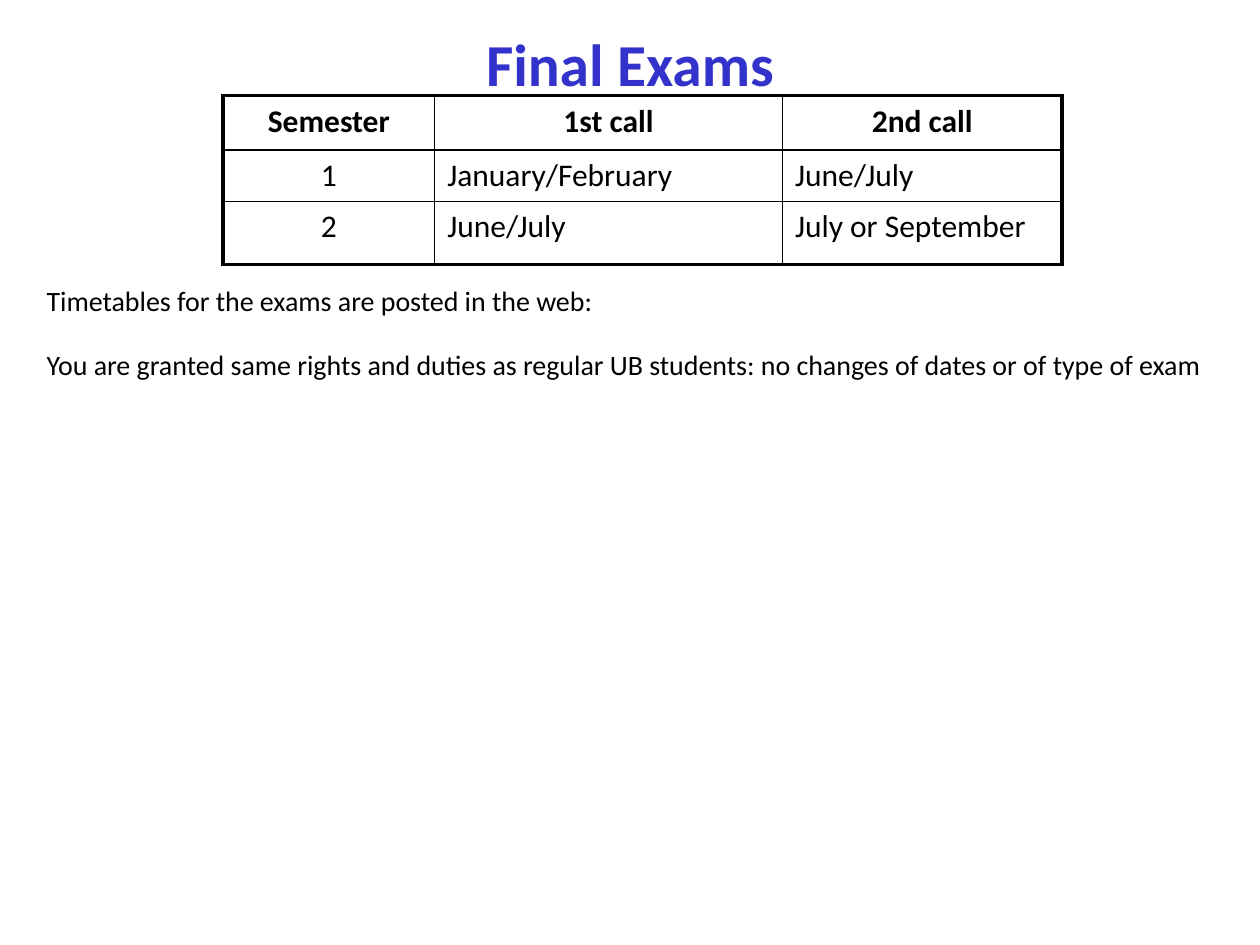
"""Build the Final Exams slide with its table of exam calls."""
from dataclasses import dataclass

from lxml.etree import SubElement
from pptx import Presentation
from pptx.dml.color import RGBColor
from pptx.enum.text import MSO_ANCHOR as Anchor, MSO_AUTO_SIZE as AutoSize, PP_ALIGN as Align
from pptx.oxml.ns import qn
from pptx.util import Inches, Pt

BLACK = RGBColor(0x00, 0x00, 0x00)
TITLE_BLUE = RGBColor(0x33, 0x33, 0xCC)
FONT = "Calibri"
OUTER_BORDER = Pt(2.25)
INNER_BORDER = Pt(1)
COLUMN_WIDTHS = (1.68, 2.76, 2.22)
ROW_HEIGHTS = (0.43, 0.41, 0.5)


@dataclass
class ExamRow:
    semester: str
    first_call: str
    second_call: str
    header: bool = False


EXAM_ROWS = (
    ExamRow("Semester", "1st call", "2nd call", header=True),
    ExamRow("1", "January/February", "June/July"),
    ExamRow("2", "June/July", "July or September"),
)
NOTES = (
    "Timetables for the exams are posted in the web:",
    "You are granted same rights and duties as regular UB students: "
    "no changes of dates or of type of exam",
)


def place(shape, left: float, top: float, width: float, height: float) -> None:
    shape.left, shape.top = Inches(left), Inches(top)
    shape.width, shape.height = Inches(width), Inches(height)


def format_runs(paragraph, size: float, color: RGBColor, bold: bool = False) -> None:
    for run in paragraph.runs:
        run.font.name = FONT
        run.font.size = Pt(size)
        run.font.bold = bold
        run.font.color.rgb = color


def add_border(cell, side: str, width: int) -> None:
    properties = cell._tc.get_or_add_tcPr()
    line = SubElement(properties, qn(f"a:ln{side}"), w=str(width))
    fill = SubElement(line, qn("a:solidFill"))
    SubElement(fill, qn("a:srgbClr"), val=str(BLACK))


def add_title(slide) -> None:
    title = slide.shapes.title
    place(title, 0.75, 0, 8.5, 1)
    frame = title.text_frame
    frame.text = "Final Exams"
    frame.auto_size = AutoSize.NONE
    frame.vertical_anchor = Anchor.MIDDLE
    frame.paragraphs[0].alignment = Align.CENTER
    format_runs(frame.paragraphs[0], 34, TITLE_BLUE, bold=True)


def add_notes(slide) -> None:
    body = slide.placeholders[1]
    place(body, 0.27, 2.25, 9.73, 3.54)
    frame = body.text_frame
    frame.text = "\n".join(NOTES)
    frame.auto_size = AutoSize.NONE
    for index, paragraph in enumerate(frame.paragraphs):
        properties = paragraph._p.get_or_add_pPr()
        properties.set("marL", str(Inches(0.62)))
        properties.set("indent", str(-Inches(0.62)))
        SubElement(properties, qn("a:buNone"))
        paragraph.line_spacing = 0.8
        paragraph.space_before = Pt(21.5 if index else 0)
        format_runs(paragraph, 16, BLACK)


def add_exam_table(slide) -> None:
    table = slide.shapes.add_table(
        len(ROW_HEIGHTS), len(COLUMN_WIDTHS), Inches(1.77), Inches(0.76),
        Inches(sum(COLUMN_WIDTHS)), Inches(sum(ROW_HEIGHTS)),
    ).table
    table.first_row = table.horz_banding = False
    for column, width in zip(table.columns, COLUMN_WIDTHS):
        column.width = Inches(width)
    last_row, last_column = len(ROW_HEIGHTS) - 1, len(COLUMN_WIDTHS) - 1
    for row_index, (exam, height) in enumerate(zip(EXAM_ROWS, ROW_HEIGHTS)):
        table.rows[row_index].height = Inches(height)
        texts = (exam.semester, exam.first_call, exam.second_call)
        for column_index, text in enumerate(texts):
            cell = table.cell(row_index, column_index)
            cell.text_frame.text = text
            paragraph = cell.text_frame.paragraphs[0]
            centered = exam.header or column_index == 0
            paragraph.alignment = Align.CENTER if centered else Align.LEFT
            format_runs(paragraph, 18, BLACK, bold=exam.header)
            outer_sides = {
                "L": column_index == 0,
                "R": column_index == last_column,
                "T": row_index == 0,
                "B": row_index == last_row,
            }
            for side, is_outer in outer_sides.items():
                add_border(cell, side, OUTER_BORDER if is_outer else INNER_BORDER)
            cell.fill.background()


def main() -> None:
    presentation = Presentation()
    presentation.slide_width = Inches(10)
    presentation.slide_height = Inches(7.5)
    slide = presentation.slides.add_slide(presentation.slide_layouts[1])
    add_title(slide)
    add_notes(slide)
    add_exam_table(slide)
    presentation.save("out.pptx")


if __name__ == "__main__":
    main()
